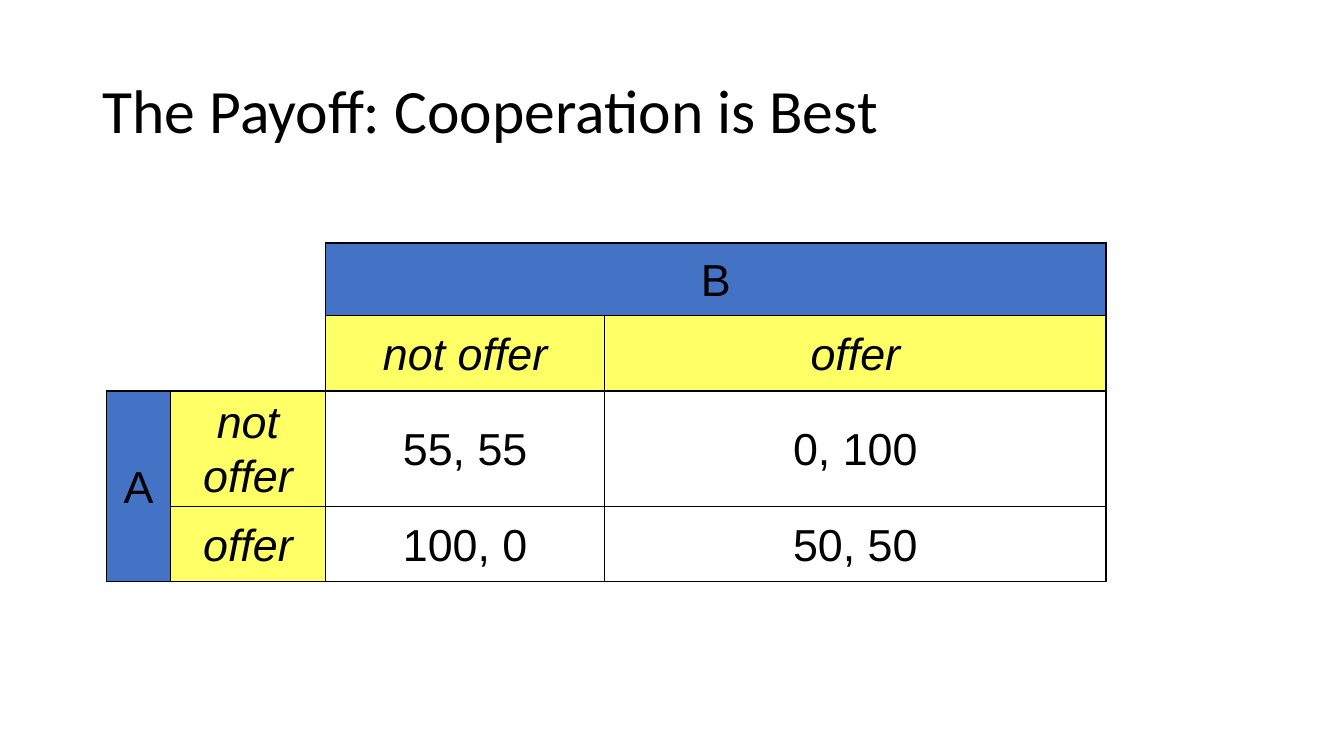
from dataclasses import dataclass

from lxml.etree import SubElement
from pptx import Presentation
from pptx.dml.color import RGBColor as RGB
from pptx.enum.text import MSO_ANCHOR as ANCHOR, PP_ALIGN as ALIGN
from pptx.oxml.ns import qn
from pptx.util import Inches, Pt


@dataclass(frozen=True)
class Theme:
    """Colours, fonts and type sizes of the slide."""
    ink: str = "000000"
    player: str = "4472C4"
    choice: str = "FFFF66"
    title_font: str = "Calibri"
    table_font: str = "Arial"
    title_size: int = 44
    table_size: int = 32
    border: int = 1


THEME = Theme()
COLUMNS = [0.63, 1.54, 2.77, 4.97]
ROWS = [0.72, 0.75, 0.75, 0.75]
PAYOFFS = [
    ["", "", "B", ""],
    ["", "", "not offer", "offer"],
    ["A", "not offer", "55, 55", "0, 100"],
    ["", "offer", "100, 0", "50, 50"],
]


def style_paragraph(p, font, size, spacing):
    """Set the font, size, colour and line spacing of a paragraph."""
    p.line_spacing = spacing
    p.font.name = font
    p.font.size = Pt(size)
    p.font.color.rgb = RGB.from_string(THEME.ink)


def set_borders(cell, sides):
    """Draw the named sides of a cell and clear the others."""
    tcPr = cell._tc.get_or_add_tcPr()
    for side in "LRTB":
        ln = SubElement(tcPr, qn(f"a:ln{side}"), w=str(Pt(THEME.border)))
        if side in sides:
            fill = SubElement(ln, qn("a:solidFill"))
            SubElement(fill, qn("a:srgbClr"), val=THEME.ink)
        else:
            SubElement(ln, qn("a:noFill"))


def style_cell(cell, row, col, text):
    """Fill, border and label one cell according to its place in the matrix."""
    if row < 2 and col < 2:
        set_borders(cell, "R" * (col == 1) + "B" * (row == 1))
    else:
        set_borders(cell, "LRTB")
    outer = min(row, col) == 0 and max(row, col) > 1
    choice = min(row, col) == 1 and max(row, col) > 1
    if outer or choice:
        cell.fill.solid()
        cell.fill.fore_color.rgb = RGB.from_string(
            THEME.player if outer else THEME.choice)
    else:
        cell.fill.background()
    if text:
        cell.text = text
        cell.vertical_anchor = ANCHOR.MIDDLE
        cell.margin_left = cell.margin_right = Inches(0.07)
        cell.margin_top = cell.margin_bottom = 0
        p = cell.text_frame.paragraphs[0]
        p.alignment = ALIGN.CENTER
        style_paragraph(p, THEME.table_font, THEME.table_size, 1.07)
        p.font.italic = choice


def add_title(s, left, top, width, height, text):
    """Place the slide title in the given box."""
    box = s.shapes.add_textbox(
        Inches(left), Inches(top), Inches(width), Inches(height))
    tf = box.text_frame
    tf.word_wrap = True
    tf.vertical_anchor = ANCHOR.MIDDLE
    p = tf.paragraphs[0]
    p.text = text
    style_paragraph(p, THEME.title_font, THEME.title_size, 0.9)


def add_payoff_matrix(s, left, top):
    """Place the payoff table with its top left corner at the given point."""
    table = s.shapes.add_table(
        len(ROWS), len(COLUMNS), Inches(left), Inches(top),
        Inches(sum(COLUMNS)), Inches(sum(ROWS))).table
    table.first_row = table.horz_banding = False
    for column, width in zip(table.columns, COLUMNS):
        column.width = Inches(width)
    for row, height in zip(table.rows, ROWS):
        row.height = Inches(height)
    for r, texts in enumerate(PAYOFFS):
        for c, text in enumerate(texts):
            style_cell(table.cell(r, c), r, c, text)
    table.cell(0, 2).merge(table.cell(0, 3))
    table.cell(2, 0).merge(table.cell(3, 0))


def main():
    """Build the slide and save it."""
    prs = Presentation()
    prs.slide_width, prs.slide_height = Inches(13.33), Inches(7.5)
    s = prs.slides.add_slide(prs.slide_layouts[6])
    add_title(s, 0.92, 0.4, 11.5, 1.45, "The Payoff: Cooperation is Best")
    add_payoff_matrix(s, 1.06, 2.41)
    prs.save("out.pptx")


if __name__ == "__main__":
    main()
